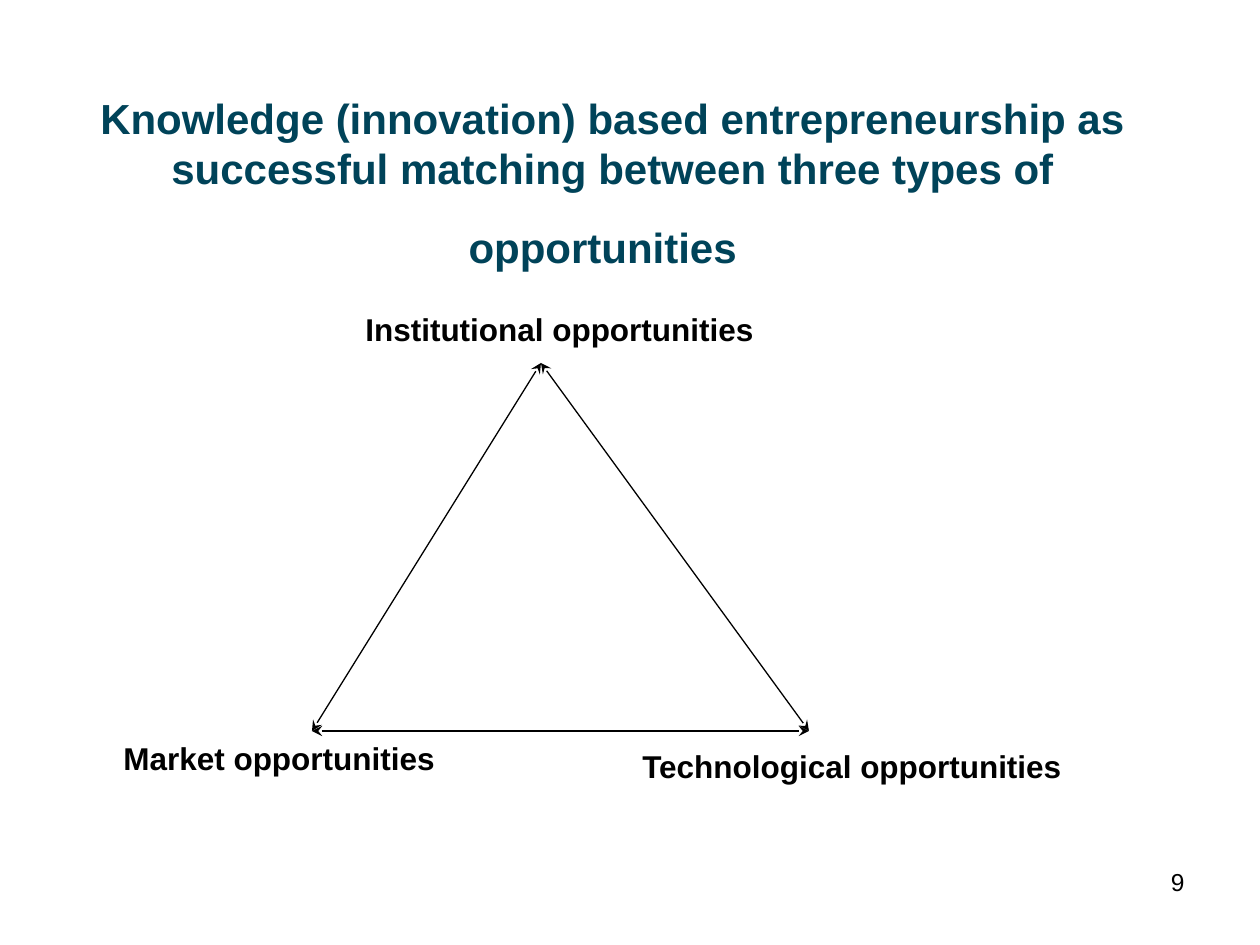
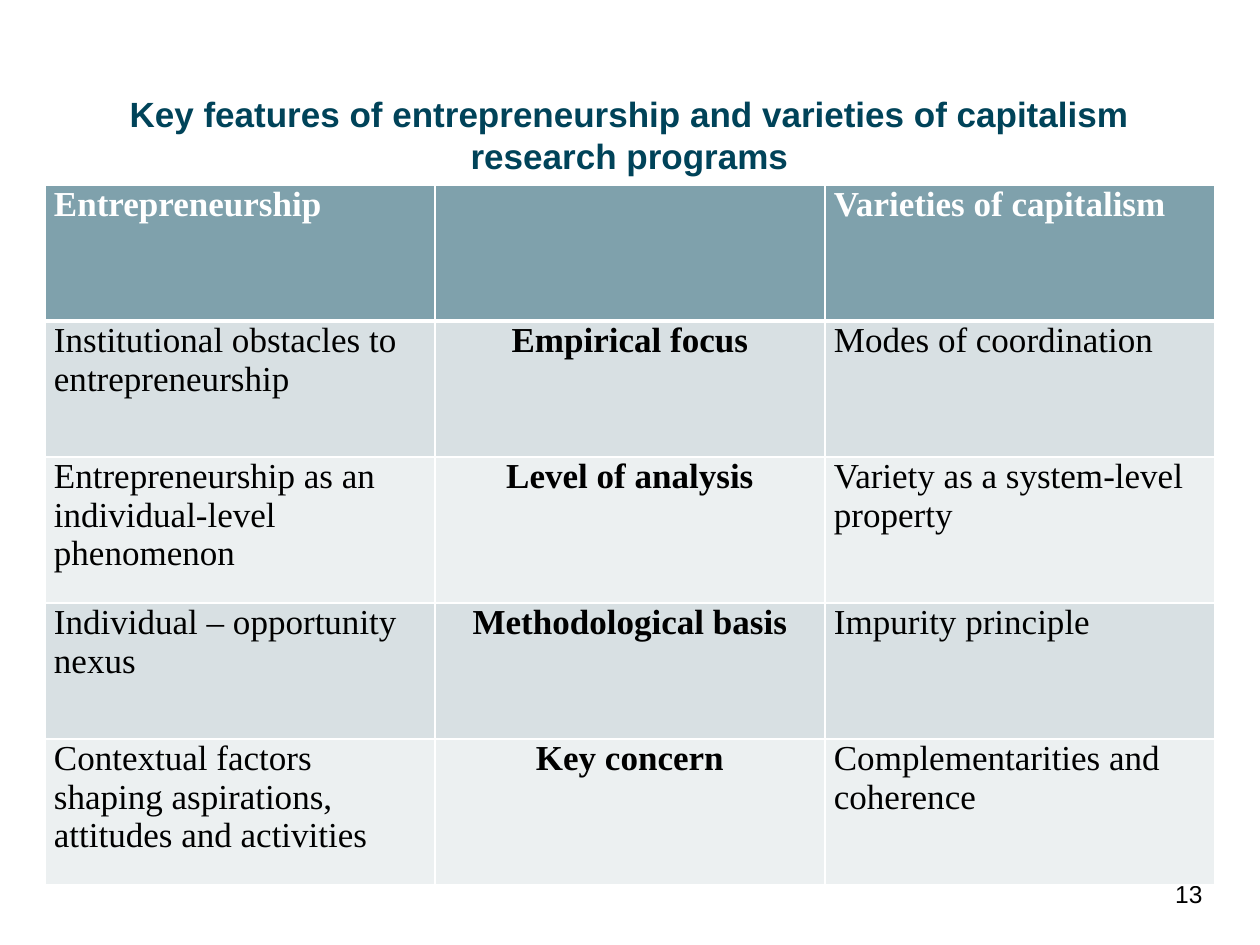
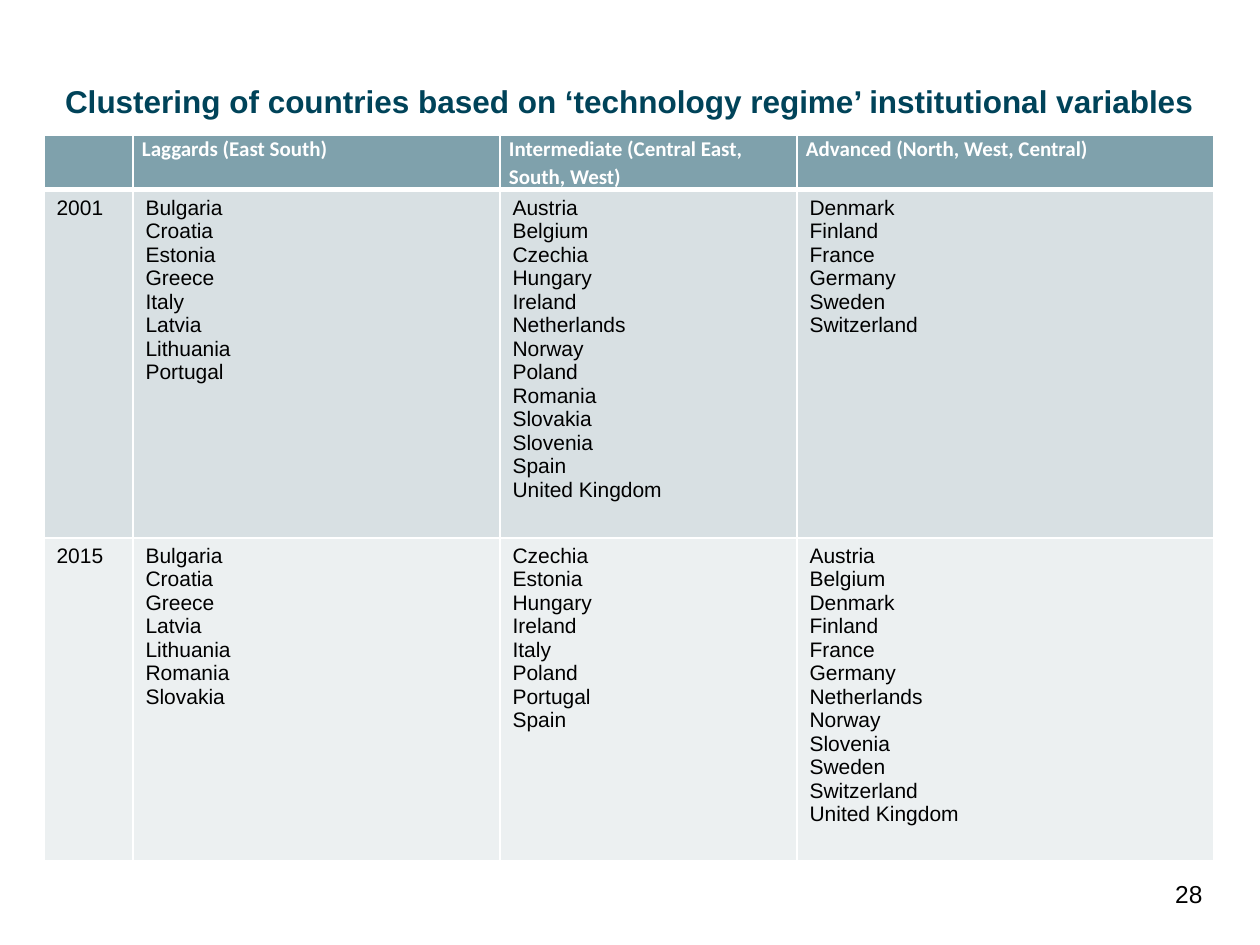
from dataclasses import dataclass
from itertools import combinations
from typing import NamedTuple

from lxml import etree
from pptx import Presentation
from pptx.dml.color import RGBColor
from pptx.enum.shapes import MSO_CONNECTOR
from pptx.enum.text import MSO_ANCHOR, MSO_AUTO_SIZE, PP_ALIGN
from pptx.oxml.ns import qn
from pptx.util import Pt

STRAIGHT = MSO_CONNECTOR.STRAIGHT
TOP = MSO_ANCHOR.TOP
NO_AUTOFIT = MSO_AUTO_SIZE.NONE
FIT_SHAPE = MSO_AUTO_SIZE.SHAPE_TO_FIT_TEXT
LEFT, CENTER, RIGHT = PP_ALIGN.LEFT, PP_ALIGN.CENTER, PP_ALIGN.RIGHT
EMU_PER_PX = 914400 / 126
TITLE_ONLY = 5


class Box(NamedTuple):
    """A region of the slide in px."""
    left: int
    top: int
    width: int
    height: int


@dataclass(frozen=True)
class Theme:
    """Colours, fonts and type sizes shared by the slides."""
    title: str = "004359"
    ink: str = "000000"
    white: str = "FFFFFF"
    header: str = "7FA1AC"
    bands: tuple = ("D8E0E3", "ECF0F1")
    sans: str = "Arial"
    serif: str = "Times New Roman"
    header_sans: str = "Calibri"
    title_large: int = 24
    title_medium: int = 20
    title_small: int = 18
    title_end: int = 40
    label: int = 18
    number: int = 14
    features: int = 20
    countries: int = 12
    header_spacing: float = 1.07
    line: float = 0.75
    border: int = 1
    header_border: int = 3


THEME = Theme()

FEATURES = (
    ("Institutional obstacles to entrepreneurship", "Empirical focus", "Modes of coordination"),
    ("Entrepreneurship as an individual-level phenomenon", "Level of analysis",
     "Variety as a system-level property"),
    ("Individual – opportunity nexus", "Methodological basis", "Impurity principle"),
    ("Contextual factors shaping aspirations, attitudes and activities", "Key concern",
     "Complementarities and coherence"),
)

CLUSTERS = (
    (("2001",),
     ("Bulgaria", "Croatia", "Estonia", "Greece", "Italy", "Latvia", "Lithuania", "Portugal"),
     ("Austria", "Belgium", "Czechia", "Hungary", "Ireland", "Netherlands", "Norway", "Poland",
      "Romania", "Slovakia", "Slovenia", "Spain", "United Kingdom"),
     ("Denmark", "Finland", "France", "Germany", "Sweden", "Switzerland")),
    (("2015",),
     ("Bulgaria", "Croatia", "Greece", "Latvia", "Lithuania", "Romania", "Slovakia"),
     ("Czechia", "Estonia", "Hungary", "Ireland", "Italy", "Poland", "Portugal", "Spain"),
     ("Austria", "Belgium", "Denmark", "Finland", "France", "Germany", "Netherlands", "Norway",
      "Slovenia", "Sweden", "Switzerland", "United Kingdom")),
)


def px(length):
    """Turn px into EMU."""
    return round(length * EMU_PER_PX)


def add_run(paragraph, text, size, color=THEME.ink, font=THEME.sans, bold=False):
    """Add one formatted run."""
    run = paragraph.add_run()
    run.text = text
    run.font.name, run.font.size, run.font.bold = font, Pt(size), bold
    run.font.color.rgb = RGBColor.from_string(color)


def add_text(slide, box, text, size, align=LEFT, bold=False, wrap=True):
    """Add a text box holding one line."""
    frame = slide.shapes.add_textbox(*map(px, box)).text_frame
    frame.word_wrap = wrap
    frame.auto_size = NO_AUTOFIT if wrap else FIT_SHAPE
    paragraph = frame.paragraphs[0]
    paragraph.alignment = align
    add_run(paragraph, text, size, bold=bold)


def add_slide(presentation, title_box, title_lines, title_size, number, number_box):
    """Add a slide with its title and number; return it and its title paragraph."""
    slide = presentation.slides.add_slide(presentation.slide_layouts[TITLE_ONLY])
    title = slide.shapes.title
    title.left, title.top, title.width, title.height = map(px, title_box)
    frame = title.text_frame
    frame.word_wrap, frame.auto_size, frame.vertical_anchor = True, NO_AUTOFIT, TOP
    paragraph = frame.paragraphs[0]
    paragraph.alignment = CENTER
    for index, line in enumerate(title_lines):
        if index:
            paragraph.add_line_break()
        add_run(paragraph, line, title_size, THEME.title, bold=True)
    add_text(slide, number_box, number, THEME.number, RIGHT)
    return slide, paragraph


def add_double_arrow(slide, start, end):
    """Draw a line with an arrowhead at each end."""
    connector = slide.shapes.add_connector(STRAIGHT, *map(px, (*start, *end)))
    connector.line.color.rgb = RGBColor.from_string(THEME.ink)
    connector.line.width = Pt(THEME.line)
    line = connector.line._get_or_add_ln()
    for end_name in ("a:headEnd", "a:tailEnd"):
        etree.SubElement(line, qn(end_name), type="stealth")
    etree.SubElement(connector._element.spPr, qn("a:effectLst"))


def add_opportunity_triangle(slide, box):
    """Draw the three linked opportunities in the box."""
    corners = [(box.left + x, box.top + y) for x, y in ((430, 59), (201, 427), (698, 427))]
    for start, end in combinations(corners, 2):
        add_double_arrow(slide, start, end)
    labels = (
        ("Institutional opportunities", 242, 0, 420),
        ("Market opportunities", 0, 429, 342),
        ("Technological opportunities", 519, 437, 452),
    )
    for text, x, y, width in labels:
        label_box = Box(box.left + x, box.top + y, width, 50)
        add_text(slide, label_box, text, THEME.label, bold=True, wrap=False)


def style_cell(cell, row_index):
    """Fill a cell by its row and give it white borders."""
    cell.fill.solid()
    color = THEME.bands[(row_index - 1) % 2] if row_index else THEME.header
    cell.fill.fore_color.rgb = RGBColor.from_string(color)
    properties = cell._tc.get_or_add_tcPr()
    for index, side in enumerate("LRTB"):
        heavy = (side == "B" and row_index == 0) or (side == "T" and row_index == 1)
        width = THEME.header_border if heavy else THEME.border
        border = etree.Element(qn(f"a:ln{side}"), w=str(Pt(width)))
        fill = etree.SubElement(border, qn("a:solidFill"))
        etree.SubElement(fill, qn("a:srgbClr"), val=THEME.white)
        properties.insert(index, border)


def add_banded_table(slide, box, column_widths, row_heights):
    """Add an empty table with a header row and bands."""
    table = slide.shapes.add_table(len(row_heights), len(column_widths), *map(px, box)).table
    for column, width in zip(table.columns, column_widths):
        column.width = px(width)
    for row_index, (row, height) in enumerate(zip(table.rows, row_heights)):
        row.height = px(height)
        for cell in row.cells:
            style_cell(cell, row_index)
    return table


def write_cell(cell, lines, size, tight=False, align=LEFT, spacing=None, **style):
    """Write one paragraph per line in a cell."""
    if tight:
        cell.margin_left = cell.margin_right = px(9)
        cell.margin_top = cell.margin_bottom = 0
    frame = cell.text_frame
    for index, line in enumerate(lines):
        paragraph = frame.add_paragraph() if index else frame.paragraphs[0]
        paragraph.alignment = align
        if spacing:
            paragraph.line_spacing = spacing
        add_run(paragraph, line, size, **style)


def add_features_table(slide, box):
    """Compare the two research programs."""
    table = add_banded_table(slide, box, [box.width // 3] * 3, (136, 136, 146, 136, 146))
    for column, text in ((0, "Entrepreneurship"), (2, "Varieties of capitalism")):
        write_cell(table.cell(0, column), [text], THEME.features, tight=True,
                   color=THEME.white, font=THEME.serif, bold=True)
    for row_index, texts in enumerate(FEATURES, 1):
        for column, text in enumerate(texts):
            middle = column == 1
            write_cell(table.cell(row_index, column), [text], THEME.features, tight=True,
                       align=CENTER if middle else LEFT, font=THEME.serif, bold=middle)


def add_clusters_table(slide, box):
    """List the countries of each cluster by year."""
    table = add_banded_table(slide, box, (89, 367, 297, 417), (39, 348, 323))
    headers = ("Laggards (East South)", "Intermediate (Central East, South, West)",
               "Advanced (North, West, Central)")
    for column, text in enumerate(headers, 1):
        write_cell(table.cell(0, column), [text], THEME.countries, tight=True,
                   spacing=THEME.header_spacing, color=THEME.white,
                   font=THEME.header_sans, bold=True)
    for row_index, clusters in enumerate(CLUSTERS, 1):
        for column, names in enumerate(clusters):
            write_cell(table.cell(row_index, column), names, THEME.countries)


def main():
    """Build the three slides and save them."""
    presentation = Presentation()
    presentation.slide_width, presentation.slide_height = px(1260), px(945)
    low_number = Box(1076, 873, 139, 66)

    slide, title = add_slide(
        presentation, Box(28, 86, 1169, 208),
        ("Knowledge (innovation) based entrepreneurship as successful matching between "
         "three types of", "opportunities"),
        THEME.title_large, "9", Box(903, 861, 294, 66))
    add_run(title, " ", THEME.title_end, THEME.title, bold=True)
    add_opportunity_triangle(slide, Box(111, 304, 971, 487))

    slide, _ = add_slide(
        presentation, Box(45, 86, 1169, 110),
        ("Key features of entrepreneurship and varieties of capitalism research programs",),
        THEME.title_medium, "13", low_number)
    add_features_table(slide, Box(45, 185, 1170, 700))

    slide, _ = add_slide(
        presentation, Box(45, 76, 1169, 59),
        ("Clustering of countries based on ‘technology regime’ institutional variables",),
        THEME.title_small, "28", low_number)
    add_clusters_table(slide, Box(44, 135, 1170, 710))

    presentation.save("out.pptx")


if __name__ == "__main__":
    main()
